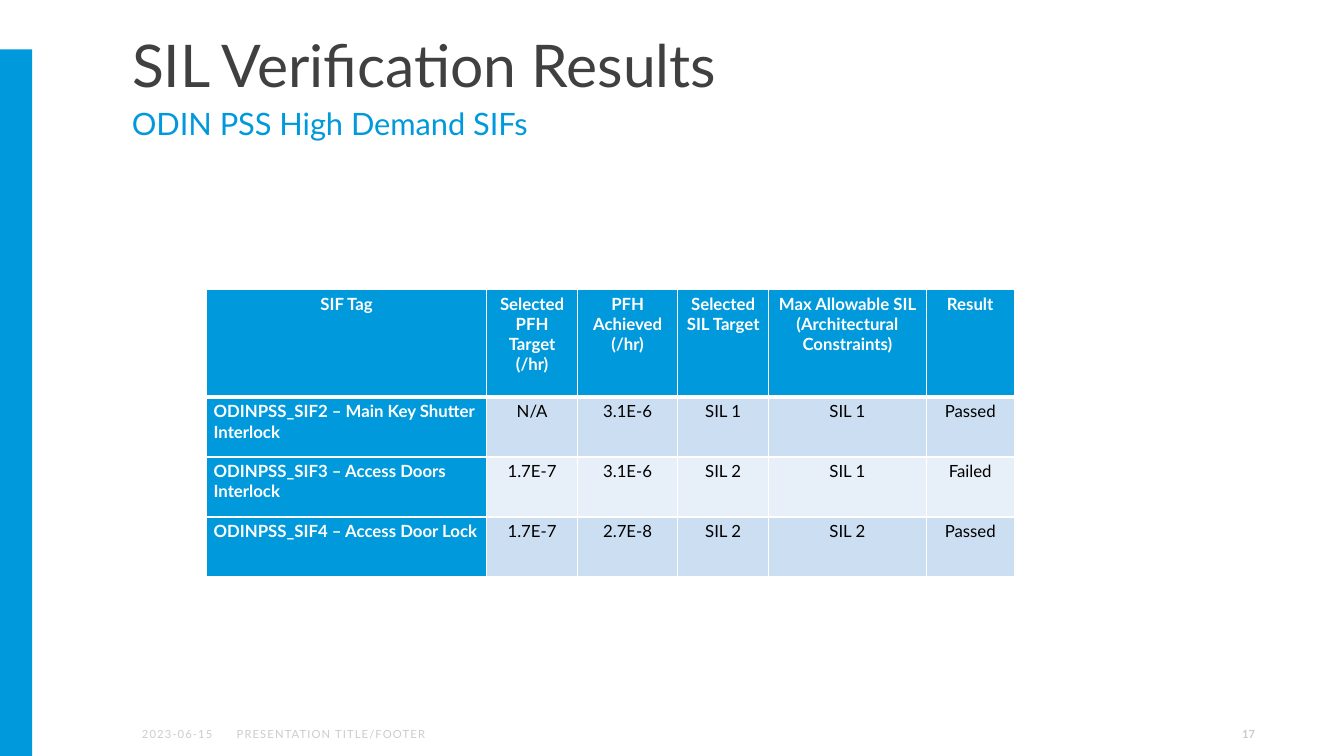
from pptx import Presentation
from pptx.dml.color import RGBColor
from pptx.enum.shapes import MSO_SHAPE
from pptx.enum.text import MSO_ANCHOR, MSO_AUTO_SIZE, PP_ALIGN
from pptx.oxml.ns import qn
from pptx.util import Pt
from lxml.etree import SubElement

FONT = "Lato"
BLUE = "0099DC"
WHITE = "FFFFFF"
FOOTER_GREY = "CCCCCC"
ROW_FILLS = ["CCDEF2", "E7EFF9"]
COLUMN_WIDTHS = [200, 65, 71.5, 65, 112.5, 63]
ROW_HEIGHTS = [77, 42.8, 42.8, 42.8]
RESULTS = [
    ["SIF Tag", "Selected PFH Target (/hr)", "PFH Achieved (/hr)", "Selected SIL Target",
     "Max Allowable SIL (Architectural Constraints)", "Result"],
    ["ODINPSS_SIF2 – Main Key Shutter Interlock", "N/A", "3.1E-6", "SIL 1", "SIL 1", "Passed"],
    ["ODINPSS_SIF3 – Access Doors Interlock", "1.7E-7", "3.1E-6", "SIL 2", "SIL 1", "Failed"],
    ["ODINPSS_SIF4 – Access Door Lock", "1.7E-7", "2.7E-8", "SIL 2", "SIL 2", "Passed"],
]


def color(value):
    return RGBColor.from_string(value)


def place(shape, left, top, width, height):
    shape.left, shape.top = Pt(left), Pt(top)
    shape.width, shape.height = Pt(width), Pt(height)


def write(paragraph, text, size, text_color, bold=False, align=PP_ALIGN.LEFT, spacing=0):
    paragraph.alignment = align
    run = paragraph.add_run()
    run.text = text
    run.font.name = FONT
    run.font.size = Pt(size)
    run.font.bold = bold
    run.font.color.rgb = color(text_color)
    if spacing:
        run._r.get_or_add_rPr().set("spc", str(round(spacing * 100)))


def set_frame(frame, anchor, top_inset=3.6, bottom_inset=3.6):
    frame.word_wrap = True
    frame.auto_size = MSO_AUTO_SIZE.NONE
    frame.vertical_anchor = anchor
    frame.margin_left = frame.margin_right = Pt(7.2)
    frame.margin_top, frame.margin_bottom = Pt(top_inset), Pt(bottom_inset)


def add_text(slide, box, text, size, text_color, anchor=MSO_ANCHOR.MIDDLE, top_inset=3.6, **style):
    shape = slide.shapes.add_textbox(0, 0, 0, 0)
    place(shape, *box)
    set_frame(shape.text_frame, anchor, top_inset)
    write(shape.text_frame.paragraphs[0], text, size, text_color, **style)


def add_sidebar(slide, left, top, width, height):
    sidebar = slide.shapes.add_shape(MSO_SHAPE.RECTANGLE, 0, 0, 0, 0)
    place(sidebar, left, top, width, height)
    sidebar.shadow.inherit = False
    sidebar.fill.solid()
    sidebar.fill.fore_color.rgb = color(BLUE)
    sidebar.line.fill.background()


def add_heading(slide, left, top, width, height):
    title_height = height - 40
    title = slide.shapes.title
    place(title, left, top, width, title_height)
    set_frame(title.text_frame, MSO_ANCHOR.BOTTOM, bottom_inset=1.4)
    paragraph = title.text_frame.paragraphs[0]
    paragraph.line_spacing = 0.9
    write(paragraph, "SIL Verification Results", 42, "404040")
    add_text(slide, (left, top + title_height + 0.5, width, 39.5), "ODIN PSS High Demand SIFs",
             22, BLUE, anchor=MSO_ANCHOR.TOP, top_inset=1.4)


def add_borders(cell, row):
    properties = cell._tc.get_or_add_tcPr()
    widths = {"L": 1, "R": 1, "T": 3 if row == 1 else 1, "B": 3 if row == 0 else 1}
    for side, width in widths.items():
        line = SubElement(properties, qn(f"a:ln{side}"), w=str(Pt(width)))
        fill = SubElement(line, qn("a:solidFill"))
        SubElement(fill, qn("a:srgbClr"), val=WHITE)


def fill_cell(cell, row, column, text):
    heading = row == 0 or column == 0
    add_borders(cell, row)
    cell.fill.solid()
    cell.fill.fore_color.rgb = color(BLUE if heading else ROW_FILLS[(row - 1) % 2])
    cell.margin_left = cell.margin_right = Pt(5)
    cell.margin_top = cell.margin_bottom = Pt(2.9)
    paragraph = cell.text_frame.paragraphs[0]
    paragraph.space_after = Pt(6)
    align = PP_ALIGN.LEFT if column == 0 and row > 0 else PP_ALIGN.CENTER
    write(paragraph, text, 12, WHITE if heading else "000000", bold=heading, align=align)


def add_results(slide, left, top):
    frame = slide.shapes.add_table(len(ROW_HEIGHTS), len(COLUMN_WIDTHS), Pt(left), Pt(top),
                                   Pt(sum(COLUMN_WIDTHS)), Pt(sum(ROW_HEIGHTS)))
    table = frame.table
    table.first_col = True
    for column, width in zip(table.columns, COLUMN_WIDTHS):
        column.width = Pt(width)
    for row, height in zip(table.rows, ROW_HEIGHTS):
        row.height = Pt(height)
    for row, texts in enumerate(RESULTS):
        for column, text in enumerate(texts):
            fill_cell(table.cell(row, column), row, column, text)


def add_footer(slide, left, top, width, height):
    add_text(slide, (left, top, 65.5, height), "2023-06-15", 8, FOOTER_GREY, spacing=0.8)
    add_text(slide, (left + 67.7, top, 340, height), "PRESENTATION TITLE/FOOTER", 8, FOOTER_GREY,
             spacing=0.8)
    add_text(slide, (left + width - 216, top, 216, height), "17", 8, FOOTER_GREY,
             bold=True, align=PP_ALIGN.RIGHT)


def main():
    presentation = Presentation()
    presentation.slide_width, presentation.slide_height = Pt(960), Pt(540)
    slide = presentation.slides.add_slide(presentation.slide_layouts[5])
    add_sidebar(slide, 0, 35.3, 23, 504.7)
    add_heading(slide, 87.1, 20.9, 737.3, 92)
    add_results(slide, 147.6, 206.7)
    add_footer(slide, 94.3, 509.8, 809.3, 28.8)
    presentation.save("out.pptx")


if __name__ == "__main__":
    main()
